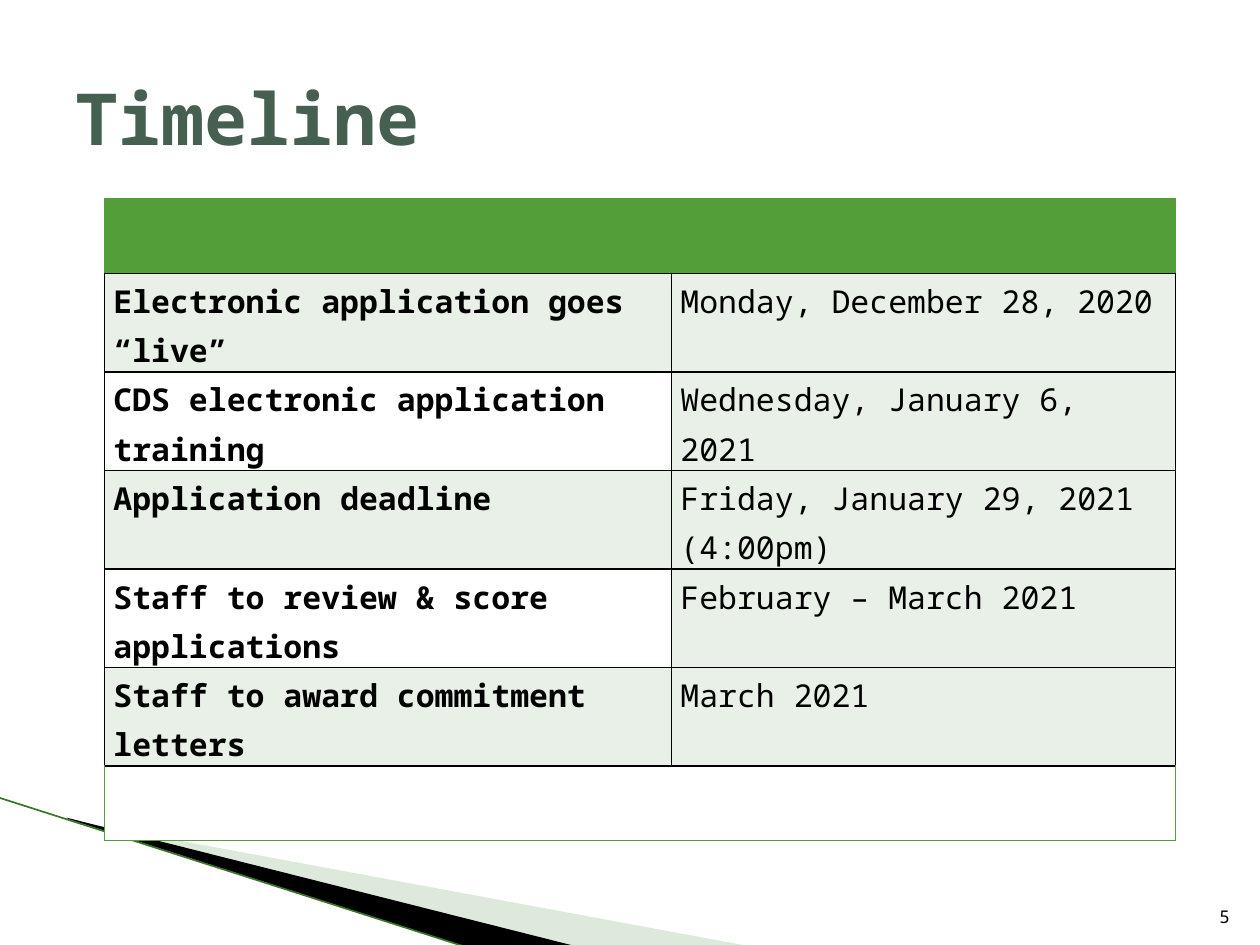
from lxml import etree
from pptx import Presentation
from pptx import util as u
from pptx.dml.color import RGBColor
from pptx.enum import shapes, text
from pptx.oxml import ns

FONT = "Noto Sans Mono"
GREEN, PALE, WHITE, BLACK = "549E39", "E9F0E8", "FFFFFF", "000000"


def paint(fill, tone):
    fill.solid()
    fill.fore_color.rgb = RGBColor.from_string(tone)


def write(frame, words, size, tone=BLACK, bold=False):
    frame.word_wrap = True
    para = frame.paragraphs[0]
    run = para.add_run()
    run.text = words
    run.font.name, run.font.size, run.font.bold = FONT, u.Pt(size), bold
    paint(run.font.fill, tone)
    return para


deck = Presentation()
deck.slide_width, deck.slide_height = u.Inches(10), u.Inches(7.5)
slide = deck.slides.add_slide(deck.slide_layouts[6])

# Corner wedges
wedges = [
    ([(0.55, 6.51), (5.95, 7.51), (4.56, 7.51), (0.55, 6.5)], "AACAA3", 40),
    ([(0.53, 6.49), (4.57, 7.51), (3.72, 7.52), (0.54, 6.5)], BLACK, 100),
]
for points, tone, alpha in wedges:
    spots = [(u.Inches(x), u.Inches(y)) for x, y in points]
    form = slide.shapes.build_freeform(*spots[0], scale=1.0)
    form.add_line_segments(spots[1:], close=True)
    wedge = form.convert_to_shape()
    wedge.shadow.inherit = False
    wedge.line.fill.background()
    paint(wedge.fill, tone)
    if alpha < 100:
        hue = wedge.fill._xPr.find(".//" + ns.qn("a:srgbClr"))
        etree.SubElement(hue, ns.qn("a:alpha"), val=str(alpha * 1000))

# Green edge of the wedge
edge = slide.shapes.add_connector(
    shapes.MSO_CONNECTOR.STRAIGHT,
    u.Inches(-0.01), u.Inches(6.33), u.Inches(3.71), u.Inches(7.52))
edge.line.width = u.Pt(0.95)
paint(edge.line.fill, "3B7327")
etree.SubElement(edge._element.spPr, ns.qn("a:effectLst"))

# Timeline table
steps = [
    ("Electronic application goes “live”", "Monday, December 28, 2020"),
    ("CDS electronic application training", "Wednesday, January 6, 2021"),
    ("Application deadline", "Friday, January 29, 2021 (4:00pm)"),
    ("Staff to review & score applications", "February – March 2021"),
    ("Staff to award commitment letters", "March 2021"),
]
rows = [("", ""), *steps, ("", "")]
highs = [0.59, 0.71, 0.71, 0.59, 0.65, 0.65, 0.59]
last = len(rows) - 1
grid = slide.shapes.add_table(
    len(rows), 2, u.Inches(0.83), u.Inches(1.58),
    u.Inches(8.5), u.Inches(sum(highs))).table
grid.first_row = grid.horz_banding = False
for col, wide in zip(grid.columns, (4.5, 4)):
    col.width = u.Inches(wide)
for i, (row, high) in enumerate(zip(rows, highs)):
    grid.rows[i].height = u.Inches(high)
    for j, words in enumerate(row):
        cell = grid.cell(i, j)
        # Green outside the dated rows, black around them
        side = BLACK if 0 < i < last else GREEN
        top = GREEN if i == 0 else BLACK
        base = GREEN if i == last else BLACK
        props = cell._tc.get_or_add_tcPr()
        for tag, tone in zip("LRTB", (side, side, top, base)):
            line = etree.SubElement(props, ns.qn("a:ln" + tag), w="12700")
            solid = etree.SubElement(line, ns.qn("a:solidFill"))
            etree.SubElement(solid, ns.qn("a:srgbClr"), val=tone)
        if i == 0:
            tone = GREEN
        elif i == last or (j == 0 and i % 2 == 0):
            tone = WHITE
        else:
            tone = PALE
        paint(cell.fill, tone)
        if words:
            cell.margin_left = cell.margin_right = u.Inches(0.07)
            cell.margin_top = cell.margin_bottom = 0
            write(cell.text_frame, words, 18, bold=j == 0).line_spacing = 1.15
grid.cell(last, 0).merge(grid.cell(last, 1))

# Title
title = slide.shapes.add_textbox(
    u.Inches(0.5), u.Inches(0.3), u.Inches(9), u.Inches(1.25)).text_frame
title.vertical_anchor = text.MSO_ANCHOR.MIDDLE
write(title, "Timeline", 41, "455F51", True)

# Slide number
num = slide.shapes.add_textbox(
    u.Inches(9.46), u.Inches(7.01), u.Inches(0.4), u.Inches(0.4)).text_frame
num.vertical_anchor = text.MSO_ANCHOR.BOTTOM
write(num, "5", 10).alignment = text.PP_ALIGN.RIGHT

deck.save("out.pptx")
